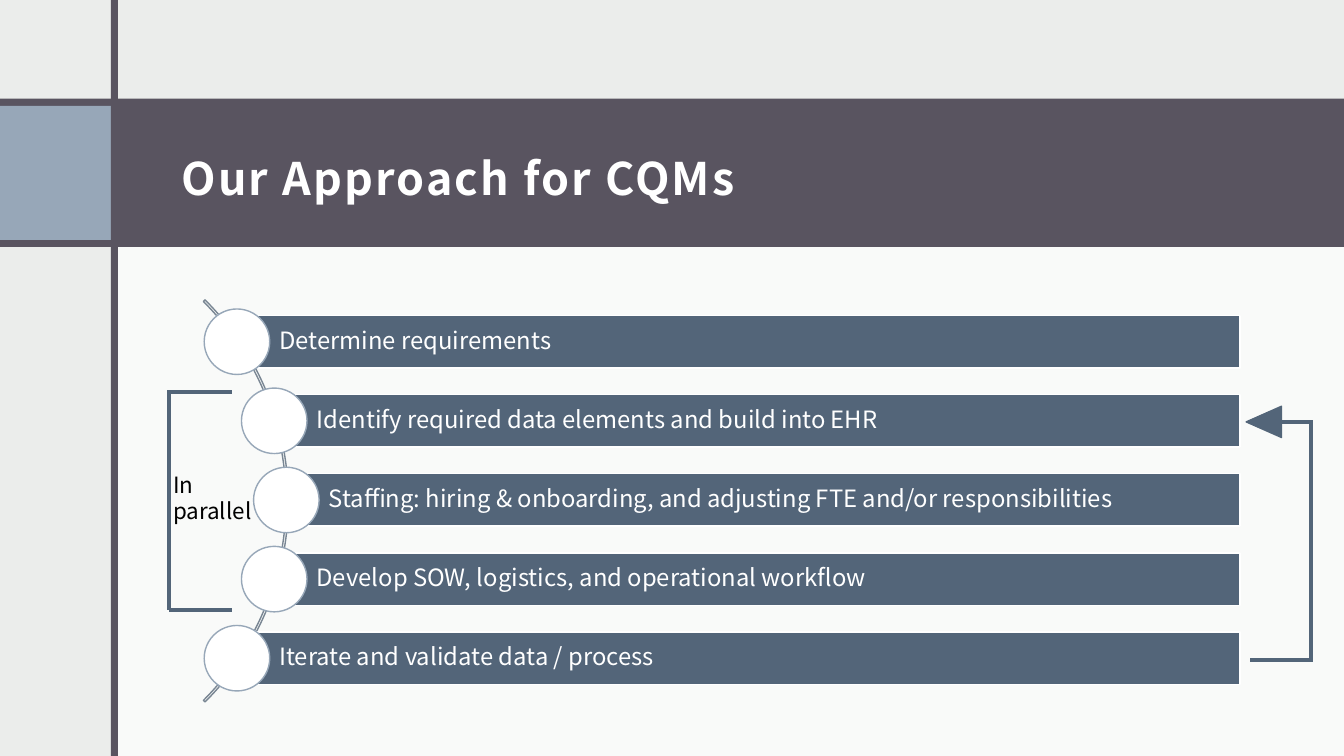
from lxml.etree import SubElement
from pptx import Presentation
from pptx.dml.color import RGBColor
from pptx.enum.shapes import MSO_CONNECTOR, MSO_SHAPE
from pptx.enum.text import MSO_ANCHOR, MSO_AUTO_SIZE, PP_ALIGN
from pptx.oxml.ns import qn
from pptx.util import Inches, Pt

FONT = "Noto Sans CJK JP"
WHITE, PALE, PLUM = "FFFFFF", "EBEDEB", "595460"
SLATE, MIST, ARC = "536579", "97A7B8", "798693"
STEPS = [
    ("Determine requirements", 2.35),
    ("Identify required data elements and build into EHR", 2.72),
    ("Staffing: hiring & onboarding, and adjusting FTE and/or responsibilities", 2.84),
    ("Develop SOW, logistics, and operational workflow", 2.72),
    ("Iterate and validate data / process", 2.35),
]
FIRST, SPAN = 3.39, 3.14
BAR_END, BAR_H, DOT = 12.3, 0.52, 0.65


def paint(color, value):
    color.rgb = RGBColor.from_string(value)


def add_box(slide, kind, left, top, width, height, fill=None, line=None):
    box = slide.shapes.add_shape(
        kind, Inches(left), Inches(top), Inches(width), Inches(height))
    box.shadow.inherit = False
    if fill:
        box.fill.solid()
        paint(box.fill.fore_color, fill)
    else:
        box.fill.background()
    if line:
        paint(box.line.color, line)
        box.line.width = Pt(1)
    else:
        box.line.fill.background()
    return box


def add_run(para, text, size, color, bold=False):
    run = para.add_run()
    run.text = text
    run.font.name = FONT
    run.font.size = Pt(size)
    run.font.bold = bold
    paint(run.font.color, color)
    para.alignment = PP_ALIGN.LEFT
    return run


def set_frame(frame, left, top, right, bottom):
    frame.margin_left, frame.margin_top = Inches(left), Inches(top)
    frame.margin_right, frame.margin_bottom = Inches(right), Inches(bottom)
    frame.vertical_anchor = MSO_ANCHOR.MIDDLE
    frame.auto_size = MSO_AUTO_SIZE.NONE
    frame.word_wrap = True


def add_line(slide, x1, y1, x2, y2):
    line = slide.shapes.add_connector(
        MSO_CONNECTOR.STRAIGHT, Inches(x1), Inches(y1), Inches(x2), Inches(y2))
    paint(line.line.color, SLATE)
    line.line.width = Pt(3)
    SubElement(line.element.spPr, qn("a:effectLst"))


def add_frame(slide):
    slide.background.fill.solid()
    paint(slide.background.fill.fore_color, PALE)
    rect = MSO_SHAPE.RECTANGLE
    panel = add_box(slide, rect, 1.14, 2.33, 12.2, 5.17, WHITE)
    tint = panel.element.spPr.find(qn("a:solidFill"))[0]
    SubElement(tint, qn("a:alpha")).set("val", "75000")
    add_box(slide, rect, 0, 0.98, 13.33, 1.47, PLUM)
    add_box(slide, rect, 0, 1.05, 1.1, 1.33, MIST)
    add_box(slide, rect, 1.1, 0, 0.07, 7.5, PLUM)


def add_title(slide, text):
    title = slide.shapes.title
    title.left, title.top = Inches(1.68), Inches(1.05)
    title.width, title.height = Inches(10.95), Inches(1.33)
    set_frame(title.text_frame, 0.12, 0.2, 0.12, 0.1)
    run = add_run(title.text_frame.paragraphs[0], text, 32, WHITE, True)
    run.font._element.set("spc", "150")
    slide.shapes.element.append(title.element)


def add_step(slide, text, left, mid):
    bar = add_box(slide, MSO_SHAPE.RECTANGLE, left, mid - BAR_H / 2,
                  BAR_END - left, BAR_H, SLATE, WHITE)
    set_frame(bar.text_frame, 0.42, 0.05, 0.05, 0.05)
    para = bar.text_frame.paragraphs[0]
    para.line_spacing = 0.9
    add_run(para, text, 17, WHITE)
    add_box(slide, MSO_SHAPE.OVAL, left - DOT / 2, mid - DOT / 2,
            DOT, DOT, WHITE, MIST)


def add_steps(slide):
    arc = add_box(slide, MSO_SHAPE.BLOCK_ARC, -2.78, 2.15, 5.64, 5.64, line=ARC)
    for i, value in enumerate((189, 27, 0.004)):
        arc.adjustments[i] = value
    pitch = SPAN / (len(STEPS) - 1)
    for i, (text, left) in enumerate(STEPS):
        add_step(slide, text, left, FIRST + i * pitch)


def add_group(slide):
    for y in (3.89, 6.05):
        add_line(slide, 2.3, y, 1.68, y)
    add_line(slide, 1.68, 6.05, 1.68, 3.87)
    note = slide.shapes.add_textbox(
        Inches(1.62), Inches(4.62), Inches(0.99), Inches(0.64))
    frame = note.text_frame
    frame.word_wrap = False
    frame.auto_size = MSO_AUTO_SIZE.SHAPE_TO_FIT_TEXT
    add_run(frame.paragraphs[0], "In", 16, "000000")
    add_run(frame.add_paragraph(), "parallel", 16, "000000")


def add_loop(slide):
    for y in (6.55, 4.19):
        add_line(slide, 13.02, y, 12.4, y)
    add_line(slide, 13, 6.56, 13, 4.2)
    head = add_box(slide, MSO_SHAPE.ISOSCELES_TRIANGLE,
                   12.38, 4.01, 0.31, 0.35, SLATE, SLATE)
    head.rotation = 270


def main():
    deck = Presentation()
    deck.slide_width, deck.slide_height = Inches(13.33), Inches(7.5)
    slide = deck.slides.add_slide(deck.slide_layouts[5])
    add_frame(slide)
    add_title(slide, "Our Approach for CQMs")
    add_steps(slide)
    add_group(slide)
    add_loop(slide)
    deck.save("out.pptx")


if __name__ == "__main__":
    main()
